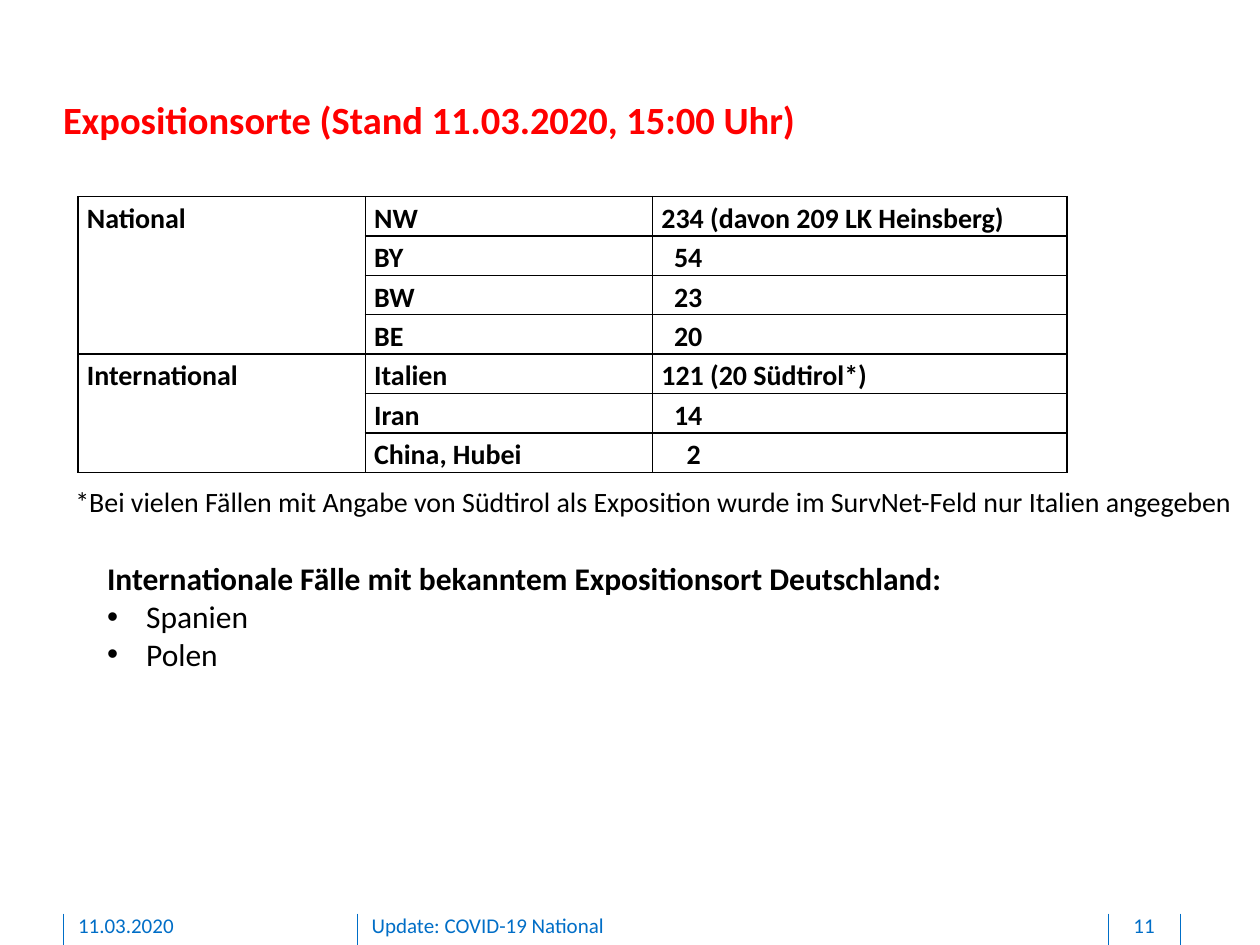
from lxml import etree
from pptx import Presentation
from pptx.dml.color import RGBColor
from pptx.enum.shapes import MSO_CONNECTOR
from pptx.enum.text import MSO_ANCHOR, PP_ALIGN
from pptx.oxml.ns import qn
from pptx.util import Inches, Pt

LINE = MSO_CONNECTOR.STRAIGHT
TOP = MSO_ANCHOR.TOP
LEFT, MID = PP_ALIGN.LEFT, PP_ALIGN.CENTER
HUES = {"title": "FF0000", "text": "000000", "foot": "006EC7"}
FONT = "Calibri"
GROUPS = [
    ("National", [
        ("NW", "234 (davon 209 LK Heinsberg)", 0),
        ("BY", "54", 0.1),
        ("BW", "23", 0.1),
        ("BE", "20", 0.1),
    ]),
    ("International", [
        ("Italien", "121 (20 Südtirol*)", 0),
        ("Iran", "14", 0.1),
        ("China, Hubei", "2", 0.2),
    ]),
]


def write(par, text, size=16, hue="text", bold=False, align=LEFT,
          space=None, after=0, inset=0, hang=0, bullet=None):
    props = par._p.get_or_add_pPr()
    props.set("marL", str(Inches(inset)))
    props.set("indent", str(Inches(-hang)))
    if bullet:
        etree.SubElement(props, qn("a:buFont")).set("typeface", "Arial")
        etree.SubElement(props, qn("a:buChar")).set("char", bullet)
    else:
        etree.SubElement(props, qn("a:buNone"))
    par.alignment = align
    par.space_before = Pt(0)
    par.space_after = Pt(after)
    if space:
        par.line_spacing = space
    run = par.add_run()
    run.text = text
    font = run.font
    font.name, font.size, font.bold = FONT, Pt(size), bold
    font.color.rgb = RGBColor.from_string(HUES[hue])


def place(shape, box):
    shape.left, shape.top, shape.width, shape.height = map(Inches, box)


def frame(shape, pad=(0.1, 0.05, 0.1, 0.05), wrap=True):
    body = shape.text_frame
    body.margin_left, body.margin_top, body.margin_right, body.margin_bottom = map(Inches, pad)
    body.word_wrap = wrap
    body.vertical_anchor = TOP
    return body


def label(slide, box, text, pad=(0.1, 0.05, 0.1, 0.05), wrap=True, **form):
    body = frame(slide.shapes.add_textbox(*map(Inches, box)), pad, wrap)
    write(body.paragraphs[0], text, **form)


def head(slide, box):
    title = slide.shapes.title
    place(title, box)
    body = frame(title, (0, 0, 0, 0))
    write(body.paragraphs[0], "Expositionsorte (Stand 11.03.2020, 15:00 Uhr)",
          size=22, hue="title", bold=True)


def border(cell):
    props = cell._tc.get_or_add_tcPr()
    for spot, side in enumerate(("lnL", "lnR", "lnT", "lnB")):
        edge = etree.Element(qn("a:" + side), w=str(Pt(1)))
        fill = etree.SubElement(edge, qn("a:solidFill"))
        etree.SubElement(fill, qn("a:srgbClr")).set("val", HUES["text"])
        props.insert(spot, edge)


def entry(cell, text, inset=0):
    write(cell.text_frame.paragraphs[0], text, bold=True, space=1.15,
          after=6, inset=inset)


def sites(slide, box):
    count = sum(len(rows) for _, rows in GROUPS)
    grid = slide.shapes.add_table(count, 3, *map(Inches, box)).table
    grid.first_row = grid.horz_banding = False
    for col, width in zip(grid.columns, (2.28, 2.28, 3.29)):
        col.width = Inches(width)
    for row in grid.rows:
        row.height = Inches(box[3] / count)
    for cell in grid.iter_cells():
        cell.margin_left = cell.margin_right = Inches(0.07)
        cell.margin_top = cell.margin_bottom = 0
        cell.fill.background()
        border(cell)
    start = 0
    for group, rows in GROUPS:
        first = grid.cell(start, 0)
        first.merge(grid.cell(start + len(rows) - 1, 0))
        entry(first, group)
        for row, (place_name, cases, inset) in enumerate(rows, start):
            entry(grid.cell(row, 1), place_name)
            entry(grid.cell(row, 2), cases, inset)
        start += len(rows)


def abroad(slide, box):
    shape = slide.placeholders[1]
    place(shape, box)
    body = frame(shape)
    write(body.paragraphs[0], "Internationale Fälle mit bekanntem Expositionsort Deutschland:",
          size=18, bold=True)
    for land in ("Spanien", "Polen"):
        write(body.add_paragraph(), land, size=18, inset=0.31, hang=0.31, bullet="•")


def foot(slide, box):
    left, top, width, height = box
    for x in (0, 2.34, 8.3, width):
        rule = slide.shapes.add_connector(
            LINE, *map(Inches, (left + x, top, left + x, top + height)))
        rule.line.width = Pt(0.5)
        rule.line.color.rgb = RGBColor.from_string(HUES["foot"])
        etree.SubElement(rule._element.spPr, qn("a:effectLst"))
    parts = [
        (0.12, 2.03, "11.03.2020", LEFT),
        (2.45, 5.67, "Update: COVID-19 National", LEFT),
        (8.31, 0.54, "11", MID),
    ]
    for x, wide, text, align in parts:
        label(slide, (left + x, top - 0.01, wide, 0.21), text,
              pad=(0, 0, 0, 0.05), size=12, hue="foot", align=align)


def main():
    deck = Presentation()
    deck.slide_width, deck.slide_height = Inches(10), Inches(7.5)
    slide = deck.slides.add_slide(deck.slide_layouts[1])
    foot(slide, (0.5, 7.25, 8.87, 0.25))
    head(slide, (0.5, 0.76, 8.85, 0.37))
    sites(slide, (0.62, 1.56, 7.85, 2.19))
    abroad(slide, (0.75, 4.39, 7.71, 1.01))
    label(slide, (0.5, 3.8, 9.5, 0.37),
          "*Bei vielen Fällen mit Angabe von Südtirol als Exposition wurde "
          "im SurvNet-Feld nur Italien angegeben", wrap=False)
    deck.save("out.pptx")


if __name__ == "__main__":
    main()
